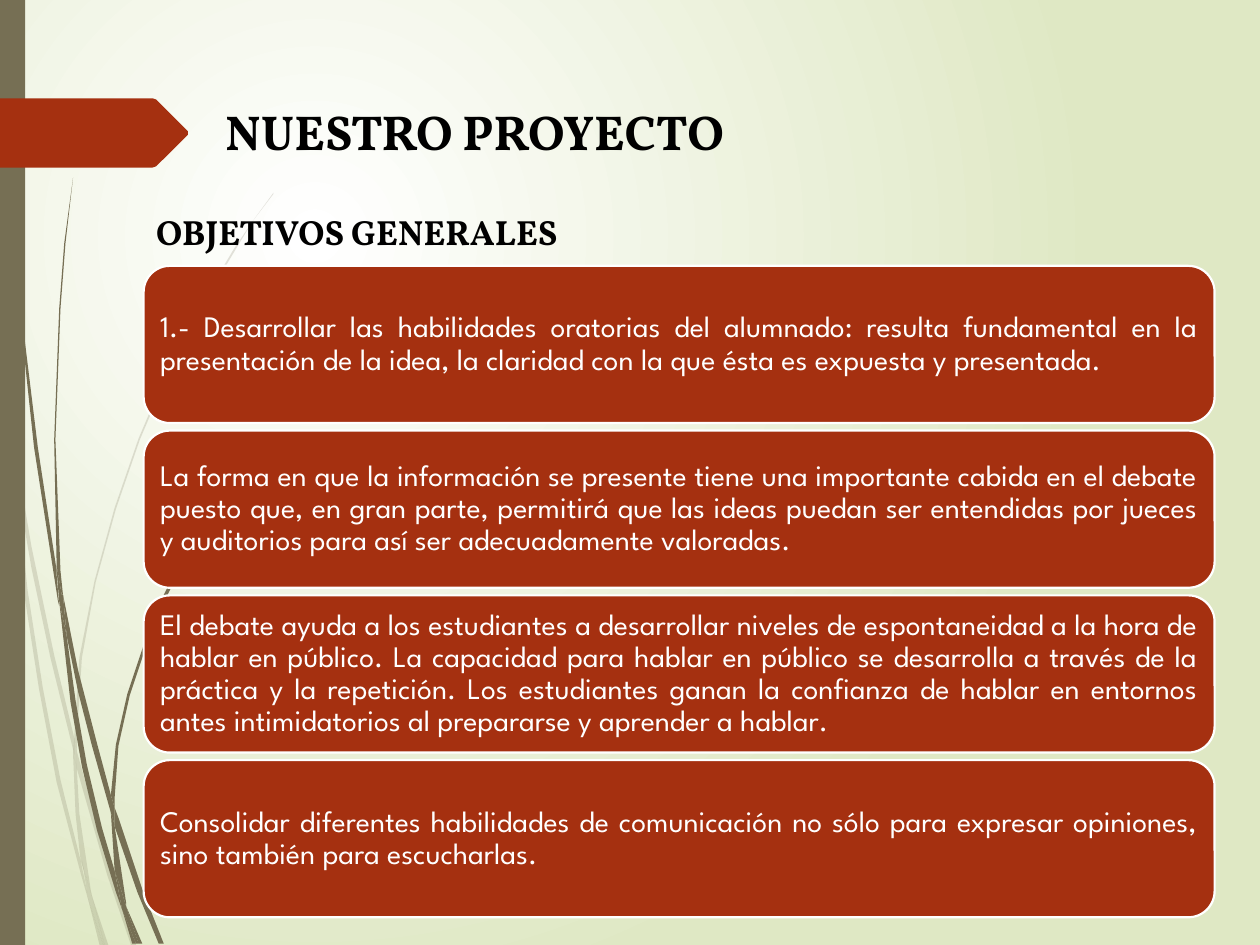
from lxml.etree import SubElement
from pptx import Presentation
from pptx.dml.color import RGBColor
from pptx.enum.shapes import MSO_SHAPE as Shape
from pptx.enum.text import MSO_ANCHOR as Anchor, MSO_AUTO_SIZE as AutoSize, PP_ALIGN as Align
from pptx.oxml import parse_xml
from pptx.oxml.ns import nsdecls, qn
from pptx.util import Inches, Pt

OLIVE, RUST, WHITE, BLACK = "766F54", "A53010", "FFFFFF", "000000"

PALE_STEMS = [
    [(0.08, 3.5), (0.06, 3.22), (0, 2.82), (0, 2.99), (0.07, 3.44)],
    [(0.4, 5.22), (0.59, 5.99), (0.59, 5.86), (0.43, 5.2), (0.25, 4.34), (0.1, 3.45),
     (0.12, 3.76), (0.25, 4.51)],
    [(0.64, 6.07), (0.61, 5.96), (0.61, 6.1), (0.85, 6.94), (1.04, 7.5), (1.08, 7.5),
     (0.88, 6.92)],
    [(0.83, 7.5), (0.86, 7.5), (0.73, 7.11)],
    [(0.64, 6.83), (0.48, 6.19), (0.34, 5.46), (0.22, 4.69), (0.12, 3.76), (0.08, 3.5),
     (0.19, 4.7), (0.31, 5.47), (0.45, 6.21), (0.64, 6.93), (0.7, 7.14), (0.69, 7.07)],
    [(0.58, 5.99), (0.6, 6.46), (0.64, 6.83), (0.67, 6.92), (0.73, 7.11), (0.72, 7.06),
     (0.63, 6.46), (0.61, 6.1), (0.61, 6.08)],
    [(0.61, 5.84), (0.65, 5.22), (0.76, 4.62), (0.92, 4.04), (1.11, 3.49), (1.34, 2.95),
     (1.59, 2.45), (1.87, 1.98), (2.01, 1.75), (2.17, 1.54), (2.17, 1.53), (2.01, 1.75),
     (1.86, 1.97), (1.58, 2.44), (1.33, 2.94), (1.1, 3.48), (0.91, 4.03), (0.75, 4.61),
     (0.63, 5.22), (0.59, 5.84), (0.59, 5.86), (0.61, 5.96)],
    [(0.7, 7.14), (0.79, 7.5), (0.82, 7.5)],
    [(0.61, 6.08), (0.61, 6.1), (0.61, 5.96), (0.59, 5.86), (0.58, 5.99)],
    [(0.67, 6.92), (0.65, 6.83), (0.69, 7.07), (0.7, 7.14), (0.82, 7.5), (0.83, 7.5),
     (0.73, 7.11)],
]
DARK_STEMS = [
    [(0.05, 1.1), (0.14, 2.33), (0.27, 3.55), (0.46, 4.77), (0.47, 4.81), (0.45, 4.57),
     (0.45, 4.53), (0.3, 3.55), (0.15, 2.32), (0.06, 1.09), (0.04, 0.48), (0.03, 0),
     (0.02, 0), (0.03, 0.48)],
    [(0.73, 5.92), (0.88, 6.45), (0.88, 6.33), (0.88, 6.31), (0.77, 5.9), (0.62, 5.32),
     (0.5, 4.72), (0.53, 5.05), (0.62, 5.49)],
    [(0.94, 6.49), (0.91, 6.41), (0.91, 6.56), (1.09, 7.08), (1.26, 7.49), (1.3, 7.49),
     (1.13, 7.06)],
    [(0.91, 6.91), (0.81, 6.57), (0.69, 6.07), (0.6, 5.56), (0.53, 5.05), (0.47, 4.77),
     (0.56, 5.57), (0.65, 6.08), (0.77, 6.59), (0.92, 7.08), (0.97, 7.22), (0.96, 7.17)],
    [(0.5, 4.72), (0.48, 4.53), (0.44, 3.49), (0.48, 2.45), (0.52, 1.93), (0.58, 1.41),
     (0.51, 1.93), (0.47, 2.45), (0.43, 3.49), (0.45, 4.49), (0.49, 4.72)],
    [(1.1, 7.49), (1.13, 7.49), (1, 7.19)],
    [(0.47, 4.77), (0.53, 5.05), (0.5, 4.72), (0.49, 4.72), (0.45, 4.49), (0.45, 4.53)],
    [(0.91, 6.33), (0.94, 5.92), (1.03, 5.52), (1.16, 5.13), (1.31, 4.76), (1.49, 4.4),
     (1.69, 4.06), (1.91, 3.74), (2.03, 3.59), (2.16, 3.44), (2.15, 3.44), (2.03, 3.58),
     (1.91, 3.73), (1.68, 4.05), (1.47, 4.39), (1.29, 4.74), (1.14, 5.12), (1.01, 5.51),
     (0.92, 5.91), (0.88, 6.31), (0.91, 6.41)],
    [(0.97, 7.22), (1.05, 7.49), (1.08, 7.49)],
    [(0.88, 6.45), (0.91, 6.91), (0.96, 7.06), (1, 7.19), (1, 7.16), (0.91, 6.56),
     (0.9, 6.51)],
    [(0.88, 6.45), (0.9, 6.51), (0.91, 6.56), (0.91, 6.41), (0.88, 6.31), (0.88, 6.33)],
    [(0.96, 7.06), (0.91, 6.91), (0.96, 7.17), (0.97, 7.22), (1.08, 7.49), (1.1, 7.49),
     (1, 7.19)],
]
ARROW = [(0, 0), (1.21, 0), (1.24, 0.01), (1.49, 0.26), (1.49, 0.29), (1.24, 0.54),
         (1.21, 0.55), (0, 0.55)]
GOALS = [
    "1.- Desarrollar las habilidades oratorias del alumnado: resulta fundamental en la "
    "presentación de la idea, la claridad con la que ésta es expuesta y presentada.",
    "La forma en que la información se presente tiene una importante cabida en el debate "
    "puesto que, en gran parte, permitirá que las ideas puedan ser entendidas por jueces "
    "y auditorios para así ser adecuadamente valoradas.",
    "El debate ayuda a los estudiantes a desarrollar niveles de espontaneidad a la hora de "
    "hablar en público. La capacidad para hablar en público se desarrolla a través de la "
    "práctica y la repetición. Los estudiantes ganan la confianza de hablar en entornos "
    "antes intimidatorios al prepararse y aprender a hablar.",
    "Consolidar diferentes habilidades de comunicación no sólo para expresar opiniones, "
    "sino también para escucharlas.",
]


def rgb(color):
    return RGBColor.from_string(color)


def paint(shape, color, opacity=100):
    shape.shadow.inherit = False
    shape.fill.solid()
    shape.fill.fore_color.rgb = rgb(color)
    shape.line.fill.background()
    if opacity < 100:
        tint = shape.fill._xPr.find(qn("a:solidFill"))[0]
        SubElement(tint, qn("a:alpha")).set("val", str(opacity * 1000))


def outline(shapes, points, left, top, color, opacity=100):
    corners = [(left + Inches(x), top + Inches(y)) for x, y in points]
    builder = shapes.build_freeform(*corners[0], scale=1.0)
    builder.add_line_segments(corners[1:], close=True)
    paint(builder.convert_to_shape(), color, opacity)


def write(paragraph, words, size, font, color, bold=False):
    run = paragraph.add_run()
    run.text = words
    run.font.size = Pt(size)
    run.font.name = font
    run.font.bold = bold
    run.font.color.rgb = rgb(color)


def backdrop(slide):
    gradient = slide.background.fill
    gradient.gradient()
    for stop, color in zip(gradient.gradient_stops, (WHITE, "DFE8C4")):
        stop.color.rgb = rgb(color)
    linear = slide.element.find(".//" + qn("a:lin"))
    linear.getparent().replace(linear, parse_xml(
        f'<a:path {nsdecls("a")} path="circle">'
        '<a:fillToRect l="50000" t="50000" r="100000" b="100000"/></a:path>'))


def side_decoration(slide, left, top, width, height):
    for stems, opacity in ((PALE_STEMS, 20), (DARK_STEMS, 100)):
        cluster = slide.shapes.add_group_shape()
        for stem in stems:
            outline(cluster.shapes, stem, left, top, OLIVE, opacity)
    band = slide.shapes.add_shape(Shape.RECTANGLE, left, top, width, height)
    paint(band, OLIVE)
    outline(slide.shapes, ARROW, left, top + Inches(0.78), RUST)


def goal_cards(slide, left, top, width, height):
    gap = Inches(0.06)
    card_height = (height - gap * (len(GOALS) - 1)) // len(GOALS)
    for row, goal in enumerate(GOALS):
        card = slide.shapes.add_shape(Shape.ROUNDED_RECTANGLE, left,
                                      top + row * (card_height + gap), width, card_height)
        paint(card, RUST)
        card.line.color.rgb = rgb(WHITE)
        card.line.width = Pt(1.25)
        frame = card.text_frame
        frame.word_wrap = True
        frame.vertical_anchor = Anchor.MIDDLE
        frame.margin_left = frame.margin_right = Inches(0.07)
        frame.margin_top = frame.margin_bottom = Inches(0.07)
        paragraph = frame.paragraphs[0]
        paragraph.alignment = Align.JUSTIFY
        paragraph.line_spacing = 0.9
        write(paragraph, goal, 17, "League Spartan", WHITE)


def heading(slide, words, size, left, top, width, height):
    frame = slide.shapes.add_textbox(left, top, width, height).text_frame
    frame.word_wrap = True
    frame.auto_size = AutoSize.SHAPE_TO_FIT_TEXT
    write(frame.paragraphs[0], words, size, "Vollkorn", BLACK, bold=True)


def main():
    deck = Presentation()
    deck.slide_width, deck.slide_height = Inches(10), Inches(7.5)
    slide = deck.slides.add_slide(deck.slide_layouts[6])
    backdrop(slide)
    side_decoration(slide, 0, 0, Inches(0.2), deck.slide_height)
    goal_cards(slide, Inches(1.14), Inches(2.11), Inches(8.5), Inches(5.17))
    heading(slide, "NUESTRO PROYECTO", 28, Inches(1.69), Inches(0.76), Inches(6.69), Inches(1.04))
    heading(slide, "OBJETIVOS GENERALES", 20, Inches(1.14), Inches(1.62), Inches(6.54), Inches(0.44))
    deck.save("out.pptx")


if __name__ == "__main__":
    main()
